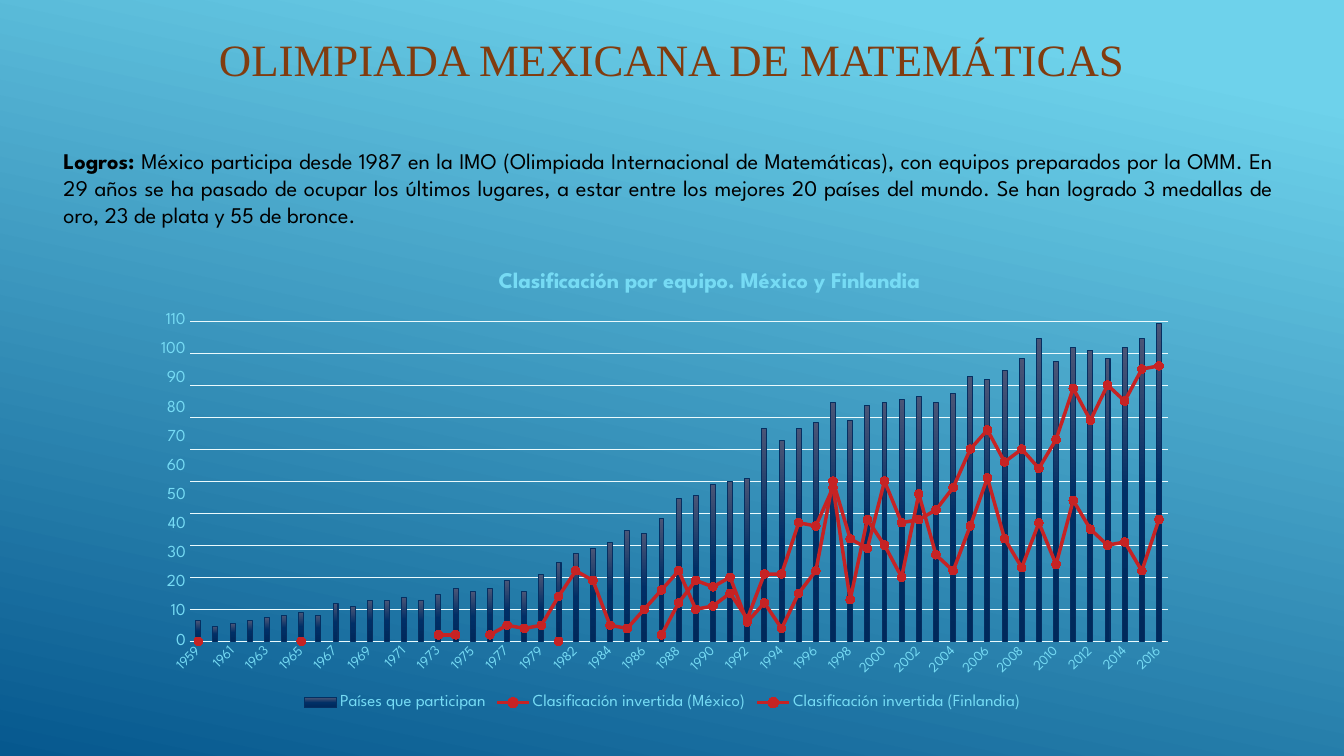
import copy

import lxml.etree
import pptx
import pptx.chart.axis
import pptx.chart.data
import pptx.dml.color
import pptx.enum.chart
import pptx.enum.text
import pptx.oxml.ns
import pptx.util

COLORS = {
    "title": "813C0F", "body": "000000", "label": "76DBF4", "grid": "EAFAFD",
    "bar_edge": "052F61", "ranking": "C62324", "finland_marker": "6A9E1F",
    "chart_text": "FFFFFF",
}
SKY = [(10, "6ED2EB"), (100, "06588E")]
BAR = [(0, "4B5576"), (50, "002F66"), (100, "00295B")]
YEARS = [str(year) for year in range(1959, 2017) if year != 1980]
COUNTRIES = [
    7, 5, 6, 7, 8, 9, 10, 9, 13, 12, 14, 14, 15, 14, 16, 18, 17, 18, 21, 17,
    23, 27, 30, 32, 34, 38, 37, 42, 49, 50, 54, 55, 56, 73, 69, 73, 75, 82,
    76, 81, 82, 83, 84, 82, 85, 91, 90, 93, 97, 104, 96, 101, 100, 97, 101,
    104, 109]
MEXICO = [0] + [None] * 20 + [0] + [None] * 5 + [
    2, 12, 19, 17, 20, 6, 12, 4, 15, 22, 50, 32, 29, 50, 37, 38, 41, 48, 60,
    66, 56, 60, 54, 63, 79, 69, 80, 75, 85, 86]
FINLAND = [None] * 6 + [0] + [None] * 7 + [
    2, 2, None, 2, 5, 4, 5, 14, 22, 19, 5, 4, 10, 16, 22, 10, 11, 15, 7, 21,
    21, 37, 36, 48, 13, 38, 30, 20, 46, 27, 22, 36, 51, 32, 23, 37, 24, 44,
    35, 30, 31, 22, 38]


def chart_node(parent, name, value=None):
    node = lxml.etree.SubElement(parent, pptx.oxml.ns.qn("c:" + name))
    if value is not None:
        node.set("val", str(value))
    return node


class Page:
    sans = "League Spartan"
    serif = "Times New Roman"

    def __init__(self, deck):
        self.deck = deck
        self.page = deck.slides.add_slide(deck.slide_layouts[6])

    def area(self, left, top, width, height):
        across, down = self.deck.slide_width / 100, self.deck.slide_height / 100
        return [int(length) for length in
                (left * across, top * down, width * across, height * down)]

    def color(self, name):
        return pptx.dml.color.RGBColor.from_string(COLORS[name])

    def style(self, font, size, color, bold=False, face=None):
        font.name = face or self.sans
        font.size = pptx.util.Pt(size)
        font.bold = bold
        font.color.rgb = self.color(color)

    def stroke(self, line, color, width):
        line.color.rgb = self.color(color)
        line.width = pptx.util.Pt(width)

    def gradient(self, fill, holder, stops, angle):
        fill.gradient()
        gradient = holder.xpath(".//a:gradFill")[0]
        stop_list = gradient.xpath("a:gsLst")[0]
        for stop in list(stop_list):
            stop_list.remove(stop)
        for position, color in stops:
            stop = lxml.etree.SubElement(
                stop_list, pptx.oxml.ns.qn("a:gs"), pos=str(position * 1000))
            lxml.etree.SubElement(stop, pptx.oxml.ns.qn("a:srgbClr"), val=color)
        gradient.xpath("a:lin")[0].set("ang", str(angle * 60000))

    def background(self, stops, angle):
        self.gradient(self.page.background.fill, self.page._element, stops, angle)

    def text(self, area, spans, size, color, align, anchor="TOP", face=None, grow=False):
        frame = self.page.shapes.add_textbox(*self.area(*area)).text_frame
        frame.word_wrap = True
        frame.vertical_anchor = pptx.enum.text.MSO_ANCHOR[anchor]
        if grow:
            frame.auto_size = pptx.enum.text.MSO_AUTO_SIZE.SHAPE_TO_FIT_TEXT
        para = frame.paragraphs[0]
        para.alignment = pptx.enum.text.PP_ALIGN[align]
        for words, bold in spans:
            span = para.add_run()
            span.text = words
            self.style(span.font, size, color, bold, face)

    def place(self, parent, index, **shares):
        for former in parent.xpath("c:layout"):
            parent.remove(former)
        layout = chart_node(parent, "layout")
        parent.insert(index, layout)
        manual = chart_node(layout, "manualLayout")
        if "w" in shares:
            chart_node(manual, "layoutTarget", "inner")
        for side in "xy":
            chart_node(manual, side + "Mode", "edge")
        for side, share in shares.items():
            chart_node(manual, side, share)

    def split_lines(self, chart):
        plot_area = chart._chartSpace.xpath("c:chart/c:plotArea")[0]
        bars = plot_area.xpath("c:barChart")[0]
        lines = chart_node(plot_area, "lineChart")
        bars.addnext(lines)
        chart_node(lines, "grouping", "standard")
        chart_node(lines, "varyColors", 0)
        countries, *rankings = bars.xpath("c:ser")
        countries.remove(countries.xpath("c:cat")[0])
        for series in rankings:
            for flag in series.xpath("c:invertIfNegative"):
                series.remove(flag)
            lines.append(series)
        chart_node(lines, "marker", 1)
        bar_axes = [plot_area.xpath("c:catAx")[0], plot_area.xpath("c:valAx")[0]]
        line_axes = copy.deepcopy(bar_axes)
        names = ["50010", "50020"]
        for axis, name, crossed in zip(line_axes, names, reversed(names)):
            axis.xpath("c:axId")[0].set("val", name)
            axis.xpath("c:crossAx")[0].set("val", crossed)
            chart_node(lines, "axId", name)
            bar_axes[0].addprevious(axis)
        return [kind(axis) for pair in (bar_axes, line_axes) for kind, axis in zip(
            (pptx.chart.axis.CategoryAxis, pptx.chart.axis.ValueAxis), pair)]

    def quiet(self, axis):
        none = pptx.enum.chart.XL_TICK_MARK.NONE
        axis.major_tick_mark = axis.minor_tick_mark = none
        axis.has_major_gridlines = False

    def ranking_chart(self, area, title, series_values):
        data = pptx.chart.data.CategoryChartData()
        data.categories = YEARS
        for name, values in series_values:
            data.add_series(name, values)
        chart = self.page.shapes.add_chart(
            pptx.enum.chart.XL_CHART_TYPE.COLUMN_CLUSTERED,
            *self.area(*area), data).chart
        self.style(chart.font, 10, "chart_text")
        chart.has_title = True
        span = chart.chart_title.text_frame.paragraphs[0].add_run()
        span.text = title
        self.style(span.font, 16, "label", True)
        self.place(chart.chart_title._element, 1, x=0.34, y=0.02)
        chart.has_legend = True
        chart.legend.position = pptx.enum.chart.XL_LEGEND_POSITION.BOTTOM
        chart.legend.include_in_layout = False
        self.style(chart.legend.font, 12, "label")

        axes = self.split_lines(chart)
        bar_years, countries_axis, years_axis, ranking_axis = axes
        for axis in axes:
            self.quiet(axis)
        bar_years.visible = ranking_axis.visible = False
        years_axis.crosses = pptx.enum.chart.XL_AXIS_CROSSES.MAXIMUM
        for axis, top in ((countries_axis, 110), (ranking_axis, 100)):
            axis.minimum_scale, axis.maximum_scale, axis.major_unit = 0, top, 10
        self.style(countries_axis.tick_labels.font, 12, "label")
        countries_axis.format.line.fill.background()
        ranking_axis.has_major_gridlines = True
        self.stroke(ranking_axis.major_gridlines.format.line, "grid", 0.75)
        self.style(years_axis.tick_labels.font, 10, "label")
        self.stroke(years_axis.format.line, "grid", 0.75)
        years = years_axis._element
        years.xpath("c:txPr/a:bodyPr")[0].set("rot", str(-45 * 60000))
        years.xpath("c:noMultiLvlLbl")[0].addprevious(chart_node(years, "tickLblSkip", 2))
        self.place(years.getparent(), 0, x=0.05, y=0.14, w=0.93, h=0.7)

        bars, lines = chart.plots
        bars.gap_width = 247
        bars.vary_by_categories = False
        countries = bars.series[0]
        self.gradient(countries.format.fill, countries._element, BAR, 90)
        self.stroke(countries.format.line, "bar_edge", 0.75)
        for series, marker_color in zip(lines.series, ("ranking", "finland_marker")):
            series.smooth = False
            self.stroke(series.format.line, "ranking", 2.5)
            series.marker.style = pptx.enum.chart.XL_MARKER_STYLE.CIRCLE
            series.marker.size = 6
            series.marker.format.fill.solid()
            series.marker.format.fill.fore_color.rgb = self.color(marker_color)
            self.stroke(series.marker.format.line, "ranking", 0.75)


def main():
    deck = pptx.Presentation()
    deck.slide_width = pptx.util.Inches(13.33)
    deck.slide_height = pptx.util.Inches(7.5)
    page = Page(deck)
    page.background(SKY, 102)
    page.text((3.98, 18.8, 91.52, 12.13), [
        ("Logros: ", True),
        ("México participa desde 1987 en la IMO (Olimpiada Internacional de "
         "Matemáticas), con equipos preparados por la OMM. En 29 años se ha pasado "
         "de ocupar los últimos lugares, a estar entre los mejores 20 países del "
         "mundo. Se han logrado 3 medallas de oro, 23 de plata y 55 de bronce.", False),
    ], 16, "body", "JUSTIFY", grow=True)
    page.text((0, 0.7, 100, 11.33), [("OLIMPIADA MEXICANA DE MATEMÁTICAS", False)],
              32, "title", "CENTER", "BOTTOM", page.serif)
    page.ranking_chart((10.2, 34, 78.24, 60.53),
                       "Clasificación por equipo. México y Finlandia", [
        ("Países que participan", COUNTRIES),
        ("Clasificación invertida (México)", MEXICO),
        ("Clasificación invertida (Finlandia)", FINLAND),
    ])
    deck.save("out.pptx")


if __name__ == "__main__":
    main()
